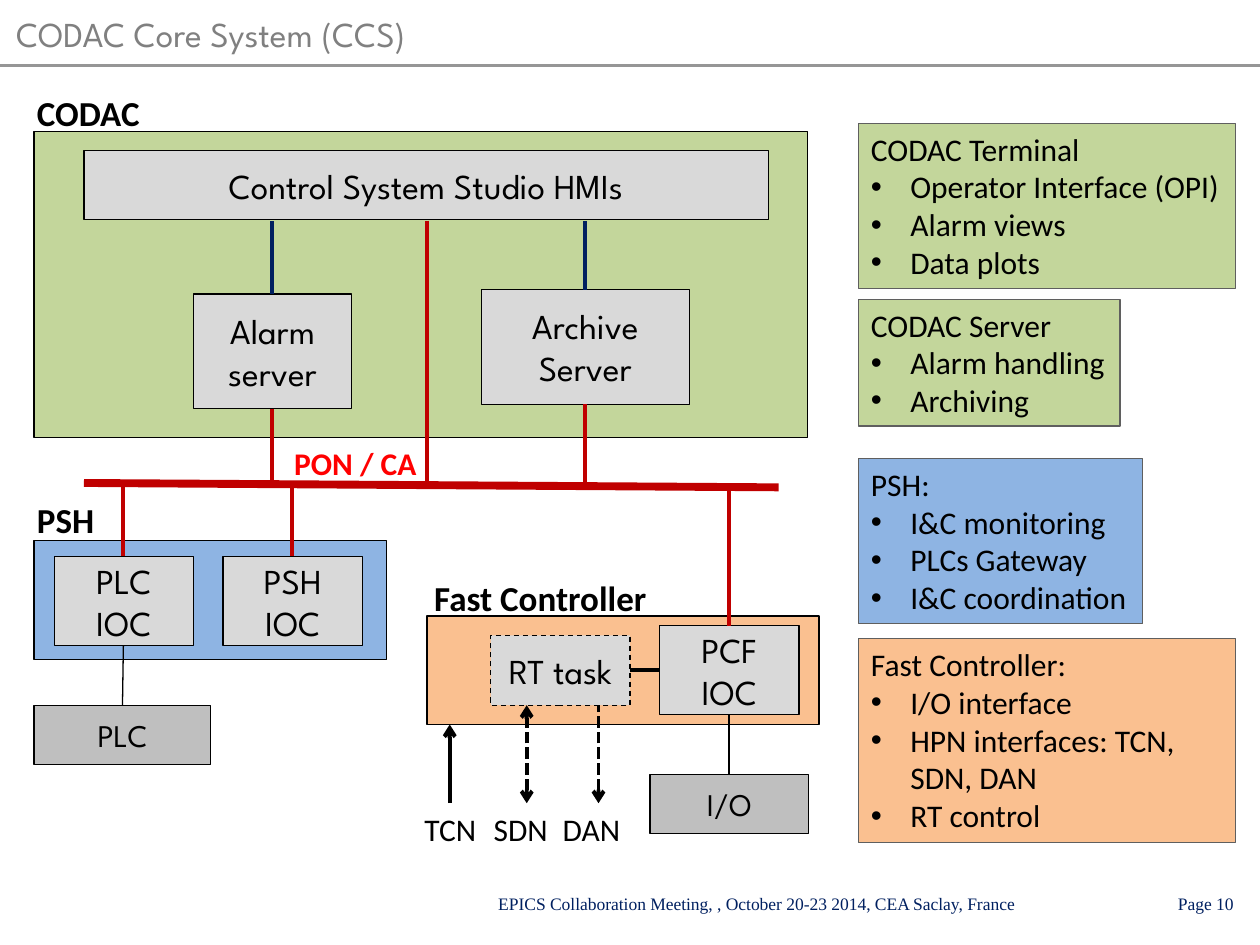
from dataclasses import dataclass
from typing import Any, Optional

from lxml.etree import SubElement
from pptx import Presentation
from pptx.dml.color import RGBColor
from pptx.enum.dml import MSO_LINE
from pptx.enum.shapes import MSO_CONNECTOR, MSO_SHAPE
from pptx.enum.text import MSO_ANCHOR, MSO_AUTO_SIZE, PP_ALIGN
from pptx.oxml.ns import qn
from pptx.util import Pt

SPARTAN, CALIBRI, TIMES = "League Spartan", "Calibri", "Times New Roman"
BLACK, NAVY, RED, EDGE = "000000", "002060", "C00000", "5F5F5F"
GREEN, BLUE, ORANGE = "C3D69B", "8EB4E3", "FAC090"
LIGHT, GREY = "D9D9D9", "BFBFBF"
PANEL_LEFT, BUS_Y, INDENT = 490.5, 278.5, 22.5


# All lengths are in points
@dataclass
class Block:
    left: float
    top: float
    width: float
    height: float
    fill: str
    text: str = ""
    size: float = 20
    dash: Optional[MSO_LINE] = None


@dataclass
class Label:
    text: str
    left: float
    top: float
    width: float
    height: float = 29
    size: float = 18
    color: str = BLACK
    bold: bool = False
    font: str = CALIBRI
    align: PP_ALIGN = PP_ALIGN.LEFT


@dataclass
class Link:
    x1: float
    y1: float
    x2: float
    y2: float
    color: str = BLACK
    weight: float = 2.25
    dash: Optional[MSO_LINE] = None
    arrows: tuple = ()


@dataclass
class Panel:
    top: float
    width: float
    height: float
    fill: str
    heading: str
    items: tuple
    wrap: bool = False


def rgb(code: str) -> RGBColor:
    return RGBColor.from_string(code)


def apply(target: Any, formats: dict) -> None:
    for name, value in formats.items():
        setattr(target, name, value)


def place(box: Any, left: float, top: float, width: float, height: float) -> None:
    apply(box, {"left": Pt(left), "top": Pt(top), "width": Pt(width), "height": Pt(height)})


def paint(box: Any, fill: str, line: str) -> None:
    box.fill.solid()
    box.fill.fore_color.rgb = rgb(fill)
    box.line.color.rgb = rgb(line)
    box.line.width = Pt(0.75)


def set_frame(box: Any, wrap: bool, anchor: MSO_ANCHOR) -> None:
    apply(box.text_frame, {"auto_size": MSO_AUTO_SIZE.NONE, "word_wrap": wrap,
                           "vertical_anchor": anchor})


def set_para(para: Any, text: str, font: str, size: float, color: str,
             align: PP_ALIGN = PP_ALIGN.LEFT, bold: bool = False) -> None:
    span = para.add_run()
    span.text = text
    apply(para, {"alignment": align, "space_before": Pt(0)})
    apply(span.font, {"name": font, "size": Pt(size), "bold": bold})
    span.font.color.rgb = rgb(color)


def write_lines(box: Any, lines: list, *formats: Any) -> None:
    for index, line in enumerate(lines):
        para = box.text_frame.add_paragraph() if index else box.text_frame.paragraphs[0]
        set_para(para, line, *formats)


def draw_block(page: Any, block: Block) -> None:
    box = page.shapes.add_shape(MSO_SHAPE.RECTANGLE, 0, 0, 0, 0)
    place(box, block.left, block.top, block.width, block.height)
    box.shadow.inherit = False
    paint(box, block.fill, BLACK)
    if block.dash:
        box.line.dash_style = block.dash
    if block.text:
        set_frame(box, True, MSO_ANCHOR.MIDDLE)
        write_lines(box, block.text.split("\n"), SPARTAN, block.size, BLACK, PP_ALIGN.CENTER)


def draw_label(page: Any, label: Label) -> None:
    box = page.shapes.add_textbox(0, 0, 0, 0)
    place(box, label.left, label.top, label.width, label.height)
    set_frame(box, label.align == PP_ALIGN.CENTER, MSO_ANCHOR.TOP)
    write_lines(box, [label.text], label.font, label.size, label.color, label.align, label.bold)


def draw_link(page: Any, link: Link) -> None:
    line = page.shapes.add_connector(MSO_CONNECTOR.STRAIGHT, Pt(link.x1), Pt(link.y1),
                                     Pt(link.x2), Pt(link.y2))
    line.line.color.rgb = rgb(link.color)
    line.line.width = Pt(link.weight)
    if link.dash:
        line.line.dash_style = link.dash
    for end in link.arrows:
        SubElement(line.line._get_or_add_ln(), qn(f"a:{end}"), type="arrow")
    SubElement(line._element.spPr, qn("a:effectLst"))


def fill_panel(box: Any, panel: Panel) -> None:
    place(box, PANEL_LEFT, panel.top, panel.width, panel.height)
    paint(box, panel.fill, EDGE)
    set_frame(box, panel.wrap, MSO_ANCHOR.TOP)
    write_lines(box, [panel.heading, *panel.items], CALIBRI, 18, BLACK)
    for index, para in enumerate(box.text_frame.paragraphs):
        margin = Pt(INDENT) if index else 0
        properties = para._p.get_or_add_pPr()
        properties.set("marL", str(margin))
        properties.set("indent", str(-margin))
        if index:
            SubElement(properties, qn("a:buFont"), typeface="Arial")
            SubElement(properties, qn("a:buChar"), char="•")
        else:
            SubElement(properties, qn("a:buNone"))


BLOCKS = [
    # CODAC
    Block(19.5, 75, 442, 175, GREEN),
    Block(48, 86, 391, 39.5, LIGHT, "Control System Studio HMIs"),
    Block(110.5, 168, 90.5, 65.5, LIGHT, "Alarm server"),
    Block(275, 165.5, 119, 65.5, LIGHT, "Archive Server"),
    # PSH
    Block(19.5, 309, 201.5, 68, BLUE),
    Block(19.5, 403, 101, 34, GREY, "PLC", 18),
    Block(31, 318, 79.5, 51, LIGHT, "PLC IOC"),
    Block(127.5, 318, 79.5, 51, LIGHT, "PSH IOC"),
    # Fast controller
    Block(244, 352, 224, 62, ORANGE),
    Block(377, 357.5, 79.5, 51, LIGHT, "PCF\nIOC"),
    Block(371.5, 442.5, 90.5, 34, GREY, "I/O", 18),
    Block(280.5, 363, 79.5, 40, LIGHT, "RT task", dash=MSO_LINE.DASH),
]

LINKS = [
    # Servers to the HMIs, and everything to the bus
    Link(155.5, 168, 155.5, 126, NAVY),
    Link(334.5, 165.5, 334.5, 126, NAVY),
    Link(155.5, 233.5, 155.5, 276, RED),
    Link(334.5, 231, 334.5, BUS_Y, RED),
    Link(244, 126, 244, BUS_Y, RED),
    Link(70.5, BUS_Y, 70.5, 318, RED),
    Link(167, BUS_Y, 167, 318, RED),
    Link(416.5, BUS_Y, 416.5, 357.5, RED),
    Link(445, BUS_Y, 48, 276, RED, 4.5),
    # Controllers to their devices
    Link(70.5, 369, 70, 403, weight=0.75),
    Link(416.5, 408.5, 416.5, 442.5, weight=0.75),
    Link(360, 383, 377, 383),
    # Networks
    Link(257, 459, 257, 414, arrows=("tailEnd",)),
    Link(301, 459, 301, 403, dash=MSO_LINE.SQUARE_DOT, arrows=("headEnd", "tailEnd")),
    Link(342, 459, 342, 403, dash=MSO_LINE.SQUARE_DOT, arrows=("headEnd",)),
]

LABELS = [
    Label("CODAC", 14, 49, 73, 31.5, 20, bold=True),
    Label("PSH", 14, 281.5, 51, 31.5, 20, bold=True),
    Label("Fast Controller", 241, 326, 154, 31.5, 20, bold=True),
    Label("PON / CA", 161, 250, 85, color="FF0000", bold=True),
    Label("TCN", 235.5, 459.5, 50),
    Label("SDN", 275, 459.5, 50),
    Label("DAN", 314.5, 459.5, 55),
    Label("EPICS Collaboration Meeting, , October 20-23 2014, CEA Saclay, France",
          144.5, 507, 575.5, 19.5, 10, NAVY, font=TIMES, align=PP_ALIGN.CENTER),
    Label("Page 10", 666, 507, 46, 19.5, 10, NAVY, font=TIMES),
]

PANELS = [
    Panel(70.5, 215.5, 94.5, GREEN, "CODAC Terminal",
          ("Operator Interface (OPI)", "Alarm views", "Data plots")),
    Panel(171, 149.5, 72.5, GREEN, "CODAC Server", ("Alarm handling", "Archiving")),
    Panel(262, 162.5, 94.5, BLUE, "PSH:",
          ("I&C monitoring", "PLCs Gateway", "I&C coordination")),
    Panel(365, 215.5, 116.5, ORANGE, "Fast Controller:",
          ("I/O interface", "HPN interfaces: TCN, SDN, DAN", "RT control"), True),
]


def main() -> None:
    deck = Presentation()
    apply(deck, {"slide_width": Pt(720), "slide_height": Pt(540)})
    # The comparison layout holds a title and four bodies
    page = deck.slides.add_slide(deck.slide_layouts[4])
    title, *bodies = list(page.placeholders)[:5]

    # Title and its rule
    place(title, 2, 3.5, 286, 31.5)
    set_frame(title, False, MSO_ANCHOR.TOP)
    write_lines(title, ["CODAC Core System (CCS)"], SPARTAN, 20, "808080")
    draw_link(page, Link(0, 37.5, 720, 37.5, "969696", 1.25))

    # Side panels
    for body, panel in zip(bodies, PANELS):
        fill_panel(body, panel)

    # Diagram and footer
    for draw, parts in ((draw_block, BLOCKS), (draw_link, LINKS), (draw_label, LABELS)):
        for part in parts:
            draw(page, part)

    deck.save("out.pptx")


if __name__ == "__main__":
    main()
